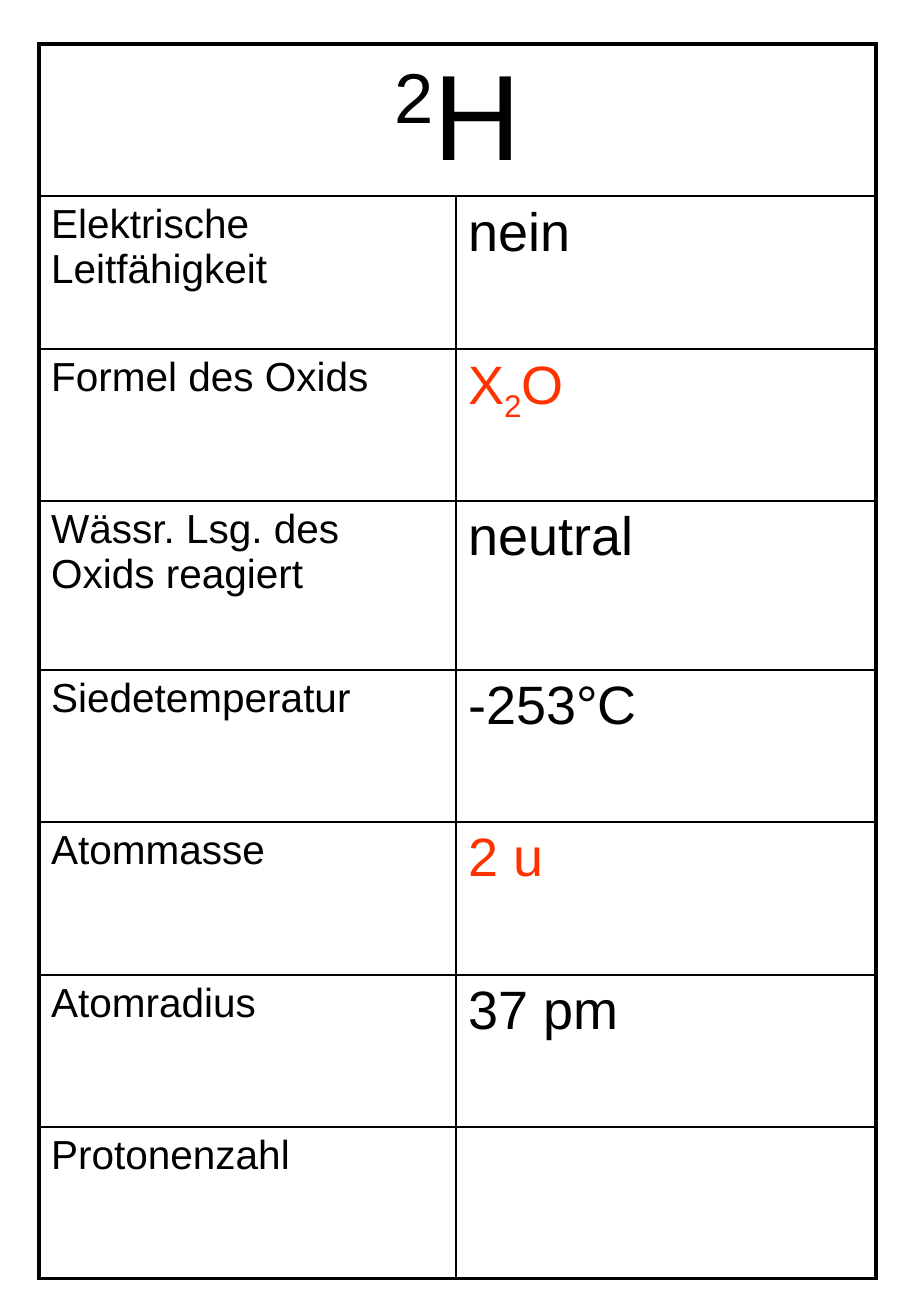
from lxml import etree
from pptx import Presentation
from pptx.dml.color import RGBColor
from pptx.enum.text import PP_ALIGN
from pptx.oxml.ns import qn
from pptx.util import Emu, Pt

CENTER, LEFT = PP_ALIGN.CENTER, PP_ALIGN.LEFT
BLACK, RED = "000000", "FF3300"
FONT = "Arial"
THICK, THIN = 2.25, 1
SUPER, SUB = 30, -25

# Content: runs are (text, baseline shift in percent)
TITLE = [("2", SUPER), ("H", 0)]
PROPERTIES = [  # label, value runs, value colour
    ("Elektrische Leitfähigkeit", [("nein", 0)], BLACK),
    ("Formel des Oxids", [("X", 0), ("2", SUB), ("O", 0)], RED),
    ("Wässr. Lsg. des Oxids reagiert", [("neutral", 0)], BLACK),
    ("Siedetemperatur", [("-253°C", 0)], BLACK),
    ("Atommasse", [("2 u", 0)], RED),
    ("Atomradius", [("37 pm", 0)], BLACK),
    ("Protonenzahl", [], BLACK),
]

# Grid lines in px
SLIDE_W, SLIDE_H = 911, 1316
COL_LINES = [39, 456, 876]
ROW_LINES = [44, 196, 349, 501, 670, 822, 975, 1127, 1279]


def px(n):
    return Emu(round(n * 914400 / 121.5))


def rgb(color):
    return RGBColor.from_string(color)


def write(cell, runs, size, color=BLACK, align=LEFT):
    p = cell.text_frame.paragraphs[0]
    p.alignment = align
    before = etree.SubElement(p._p.get_or_add_pPr(), qn("a:spcBef"))
    etree.SubElement(before, qn("a:spcPct")).set("val", "20000")
    for text, shift in runs:
        r = p.add_run()
        r.text = text
        r.font.name = FONT
        r.font.size = Pt(size)
        r.font.color.rgb = rgb(color)
        if shift:
            r._r.get_or_add_rPr().set("baseline", str(shift * 1000))


def set_borders(cell, widths):
    tcPr = cell._tc.get_or_add_tcPr()
    for i, (side, width) in enumerate(widths.items()):
        ln = etree.Element(qn("a:ln" + side), w=str(Pt(width)))
        fill = etree.SubElement(ln, qn("a:solidFill"))
        etree.SubElement(fill, qn("a:srgbClr")).set("val", BLACK)
        tcPr.insert(i, ln)


prs = Presentation()
prs.slide_width, prs.slide_height = px(SLIDE_W), px(SLIDE_H)
s = prs.slides.add_slide(prs.slide_layouts[6])

# Table frame and grid
n_rows, n_cols = len(ROW_LINES) - 1, len(COL_LINES) - 1
left, top = COL_LINES[0], ROW_LINES[0]
table = s.shapes.add_table(n_rows, n_cols, px(left), px(top),
                           px(COL_LINES[-1] - left), px(ROW_LINES[-1] - top)).table
table.first_row = table.horz_banding = False
for parts, lines, attr in ((table.columns, COL_LINES, "width"),
                           (table.rows, ROW_LINES, "height")):
    for part, start, end in zip(parts, lines, lines[1:]):
        setattr(part, attr, px(end - start))

# Cell fills, thick outer and thin inner borders
for row in range(n_rows):
    for col in range(n_cols):
        cell = table.cell(row, col)
        cell.fill.background()
        set_borders(cell, {
            "L": THICK if col == 0 else THIN,
            "R": THICK if col == n_cols - 1 or row == 0 else THIN,
            "T": THICK if row == 0 else THIN,
            "B": THICK if row == n_rows - 1 else THIN,
        })

# Title row and property rows
table.cell(0, 0).merge(table.cell(0, n_cols - 1))
write(table.cell(0, 0), TITLE, 72, align=CENTER)
for row, (label, value, color) in enumerate(PROPERTIES, start=1):
    write(table.cell(row, 0), [(label, 0)], 24)
    write(table.cell(row, 1), value, 32, color)

prs.save("out.pptx")
